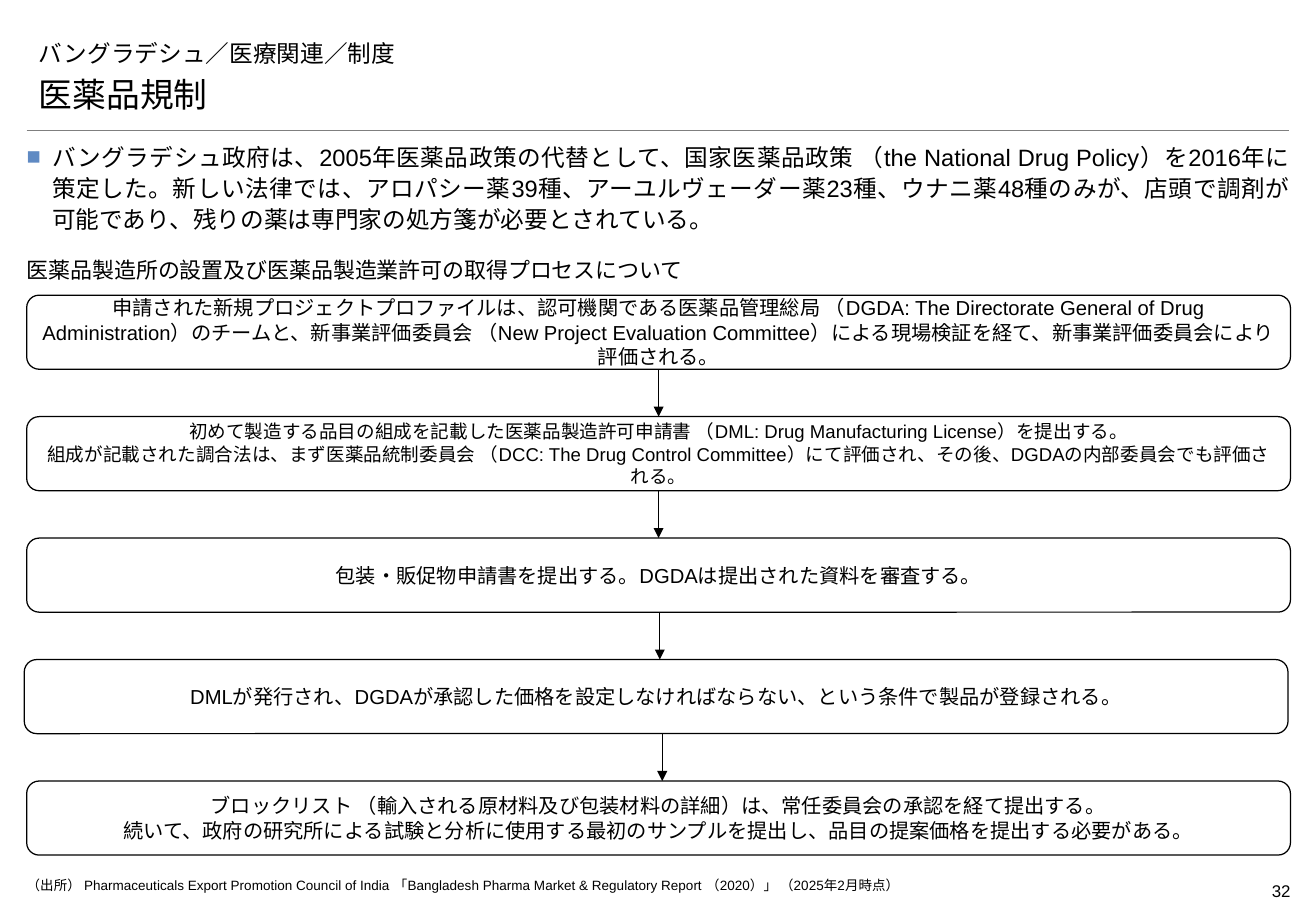
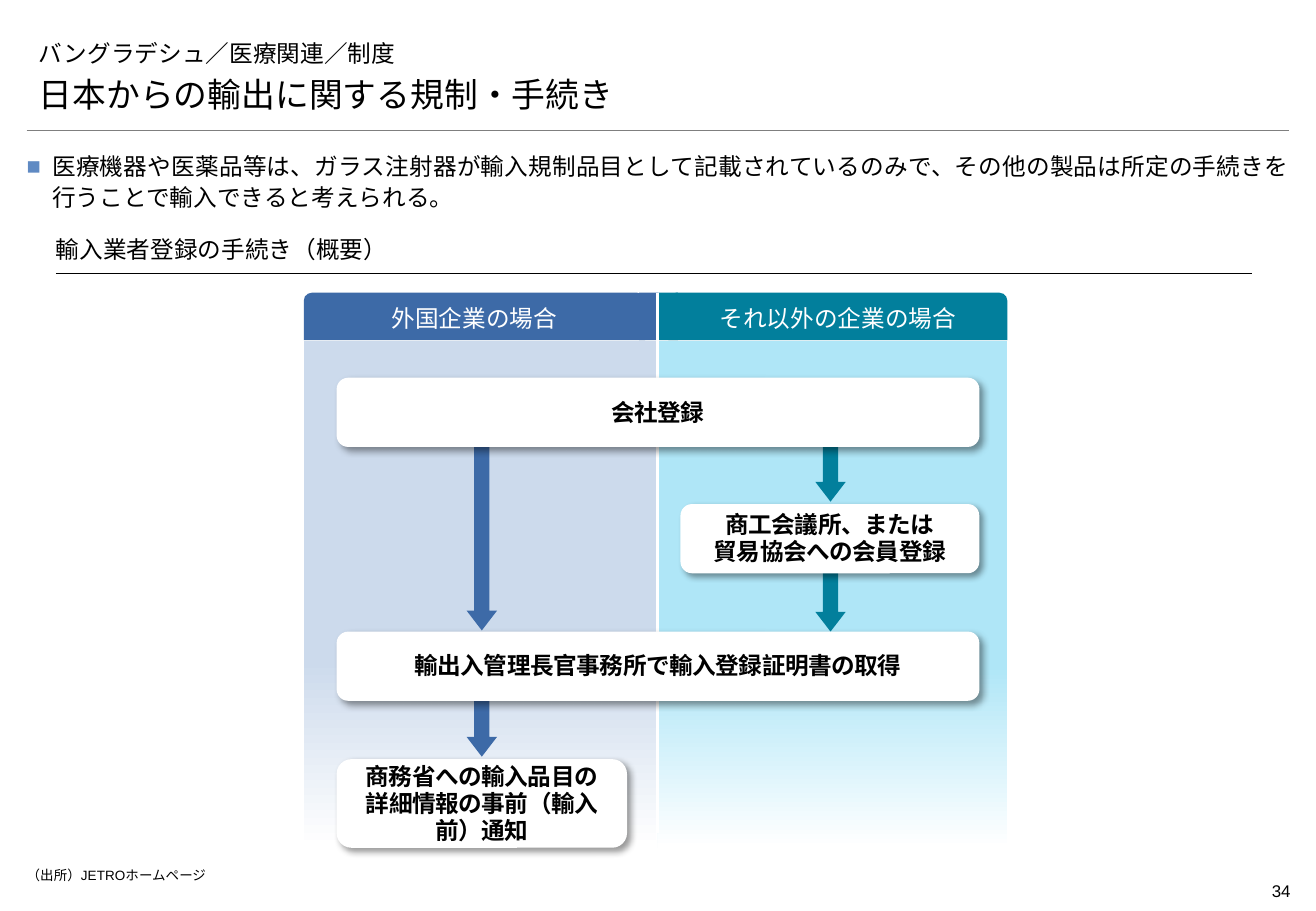
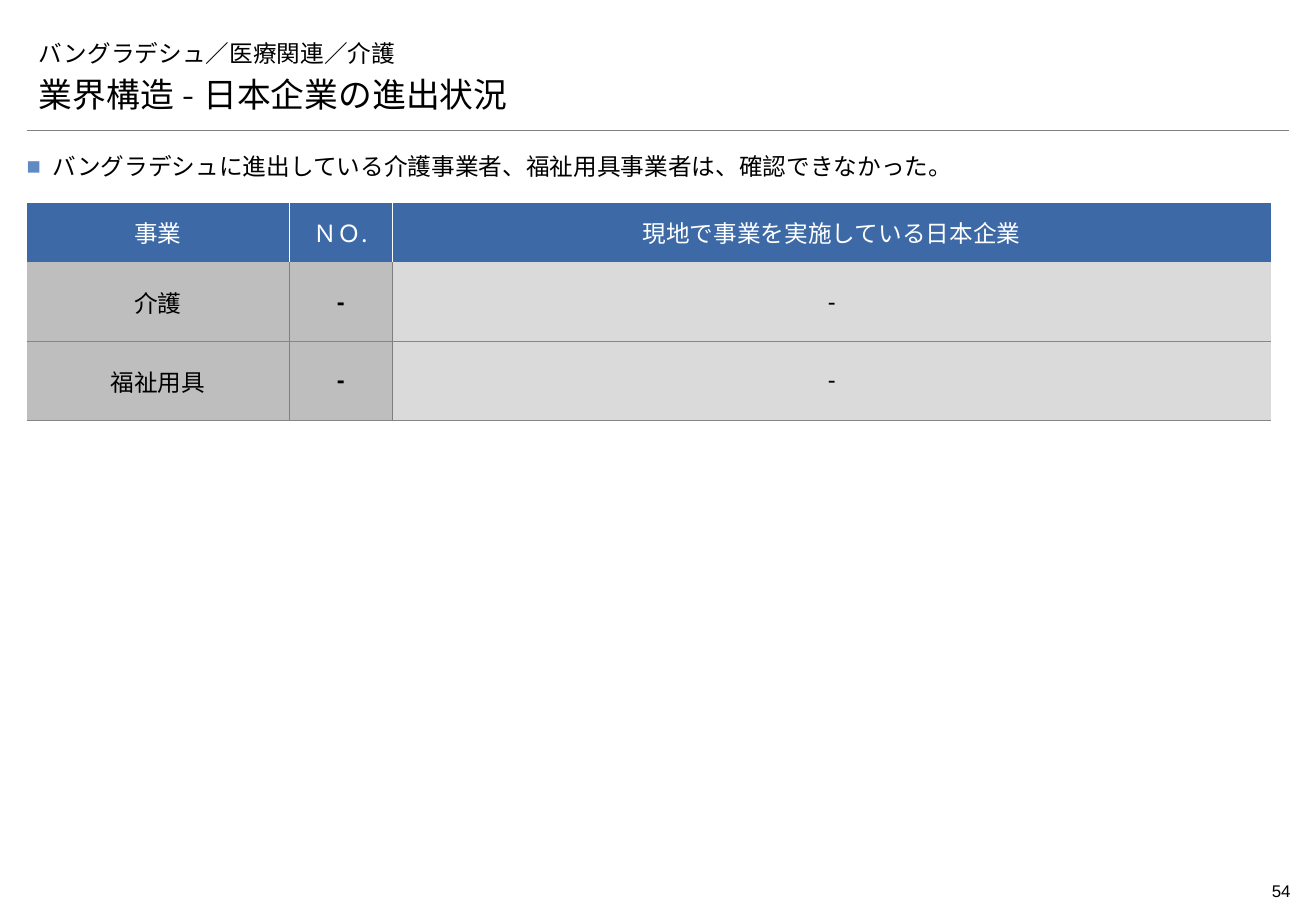
"""Build three slides on medical regulation and trade in Bangladesh."""
from copy import deepcopy
from dataclasses import dataclass
from typing import Any

from lxml import etree
from pptx import Presentation
from pptx.dml.color import RGBColor
from pptx.enum import shapes, text
from pptx.oxml import ns
from pptx.util import Inches, Pt

BLACK = RGBColor(0x00, 0x00, 0x00)
WHITE = RGBColor(0xFF, 0xFF, 0xFF)
BLUE = RGBColor(0x3D, 0x6A, 0xA7)
TEAL = RGBColor(0x02, 0x7F, 0x9C)
PALE = RGBColor(0xCC, 0xDA, 0xEC)
AQUA = RGBColor(0xAF, 0xE6, 0xF7)
MARK = RGBColor(0x5F, 0x8A, 0xC3)
GRAY = RGBColor(0x7F, 0x7F, 0x7F)
RULE = RGBColor(0x86, 0x86, 0x86)
DARK = RGBColor(0xBE, 0xBE, 0xBE)
LIGHT = RGBColor(0xDA, 0xDA, 0xDA)

ARIAL, MONT, NOTO = "Arial", "Montserrat", "Noto Sans CJK JP"
KIND = shapes.MSO_SHAPE
ALIGN = text.PP_ALIGN
MID = text.MSO_ANCHOR.MIDDLE
LOW = text.MSO_ANCHOR.BOTTOM
PLAIN = "{2D5ABB26-0587-4C30-8999-92F81FD0307C}"
LEFT, WIDE = 0.22, 10.39

Fmt = dict[str, Any]


@dataclass(frozen=True)
class Box:
    """Place of a shape in inches."""
    x: float
    y: float
    w: float
    h: float

    def args(self) -> tuple:
        """Return the place as lengths."""
        return tuple(Inches(v) for v in (self.x, self.y, self.w, self.h))


@dataclass(frozen=True)
class Step:
    """Step of the licence process and the x of the arrow below it."""
    words: str
    size: int = 12
    x: float = LEFT
    tail: float = 0


@dataclass(frozen=True)
class Card:
    """White card of the import flow."""
    box: Box
    words: str


@dataclass(frozen=True)
class Lane:
    """Column of the import flow with its head, filler and arrows."""
    body: Box
    head: Box
    patch: Box
    name: str
    color: RGBColor
    tint: RGBColor
    stop: float
    down: tuple[Box, ...]


@dataclass(frozen=True)
class Look:
    """Look of one table column."""
    width: float
    fill: RGBColor
    font: str
    bold: bool
    pad: float


def apply(obj: Any, vals: Fmt) -> None:
    """Set each named attribute."""
    for key, val in vals.items():
        setattr(obj, key, val)


def pads(x: float = 0.1, top: float = 0.05, low: float = 0.05) -> Fmt:
    """Return frame margins."""
    return {"margin_left": Inches(x), "margin_right": Inches(x),
            "margin_top": Inches(top), "margin_bottom": Inches(low)}


def node(parent: Any, tag: str, **attrs: str) -> Any:
    """Append a drawing element."""
    return etree.SubElement(parent, ns.qn(tag), attrs)


def write(frame: Any, words: str, size: float, name: str = ARIAL,
          color: RGBColor = BLACK, bold: bool = False, para: Fmt | None = None,
          track: int = 0) -> Any:
    """Write one formatted paragraph and return it."""
    line = frame.paragraphs[0]
    line.text = words
    apply(line, {"alignment": ALIGN.LEFT, **(para or {})})
    for run in line.runs:
        apply(run.font, {"size": Pt(size), "name": name, "bold": bold})
        run.font.color.rgb = color
        props = run.font._element
        if track:
            props.set("spc", str(track))
        node(props, "a:ea", typeface=NOTO)
    for gap in line._p.findall(ns.qn("a:br")):
        gap.append(deepcopy(line.runs[0].font._element))
    return line


def frame(shape: Any, vals: Fmt) -> Any:
    """Format and return a text frame."""
    apply(shape.text_frame, {"word_wrap": True,
                             "auto_size": text.MSO_AUTO_SIZE.NONE, **vals})
    return shape.text_frame


def label(slide: Any, box: Box, words: str, size: float, vals: Fmt, **look: Any) -> Any:
    """Add a text box and return its paragraph."""
    shape = slide.shapes.add_textbox(*box.args())
    return write(frame(shape, vals), words, size, **look)


def block(slide: Any, kind: Any, box: Box, fill: RGBColor, edge: RGBColor | None = None) -> Any:
    """Add a flat preset shape."""
    shape = slide.shapes.add_shape(kind, *box.args())
    shape.shadow.inherit = False
    shape.fill.solid()
    shape.fill.fore_color.rgb = fill
    if edge is None:
        shape.line.fill.background()
    else:
        shape.line.color.rgb = edge
        shape.line.width = Pt(0.75)
    return shape


def rule(slide: Any, x: float, y: float, to: tuple[float, float],
         color: RGBColor = BLACK, width: float = 0.75, arrow: bool = False) -> None:
    """Add a straight line."""
    ends = [Inches(v) for v in (x, y, *to)]
    line = slide.shapes.add_connector(shapes.MSO_CONNECTOR.STRAIGHT, *ends)
    line.line.color.rgb = color
    line.line.width = Pt(width)
    props = line._element.spPr
    if arrow:
        node(props.find(ns.qn("a:ln")), "a:tailEnd", type="triangle")
    node(props, "a:effectLst")


def base(deck: Any, trail: str, head: str, page: int) -> Any:
    """Add a slide with title, heading, rule and page number."""
    slide = deck.slides.add_slide(deck.slide_layouts[5])
    title = slide.shapes.title
    place = Box(LEFT, 0.21, WIDE, 0.39).args()
    apply(title, dict(zip(("left", "top", "width", "height"), place)))
    low = {"vertical_anchor": LOW, **pads()}
    write(frame(title, low), trail, 14, MONT)
    label(slide, Box(LEFT, 0.6, 10.4, 0.39), head, 20, low, name=MONT)
    rule(slide, LEFT, 1.07, (LEFT + WIDE, 1.07), GRAY, 0.25)
    label(slide, Box(9.83, 7.2, 0.79, 0.27), str(page), 10, pads(0),
          para={"alignment": ALIGN.RIGHT})
    return slide


def point(slide: Any, y: float, h: float, words: str) -> None:
    """Add the bulleted lead text."""
    line = label(slide, Box(LEFT, y, WIDE, h), words, 14, pads(0, 0, 0),
                 para={"alignment": ALIGN.JUSTIFY, "line_spacing": 1.1,
                       "space_after": Pt(2)})
    props = line._p.get_or_add_pPr()
    props.set("marL", str(Inches(0.21)))
    props.set("indent", str(-Inches(0.21)))
    node(node(props, "a:buClr"), "a:srgbClr", val=str(MARK))
    node(props, "a:buFont", typeface=ARIAL)
    node(props, "a:buChar", char="■")


def cite(slide: Any, y: float, words: str) -> None:
    """Add the source line."""
    label(slide, Box(LEFT, y, 10, 0.16), words, 8, pads(0, 0, 0))


STEPS = (
    Step("申請された新規プロジェクトプロファイルは、認可機関である医薬品管理総局 "
         "（DGDA: The Directorate General of Drug Administration）のチームと、"
         "新事業評価委員会 （New Project Evaluation Committee）による現場検証を経て、"
         "新事業評価委員会により評価される。", tail=5.42),
    Step("初めて製造する品目の組成を記載した医薬品製造許可申請書 "
         "（DML: Drug Manufacturing License）を提出する。\n"
         "組成が記載された調合法は、まず医薬品統制委員会 "
         "（DCC: The Drug Control Committee）にて評価され、その後、"
         "DGDAの内部委員会でも評価される。", size=11, tail=5.42),
    Step("包装・販促物申請書を提出する。DGDAは提出された資料を審査する。", tail=5.43),
    Step("DMLが発行され、DGDAが承認した価格を設定しなければならない、"
         "という条件で製品が登録される。", x=0.2, tail=5.45),
    Step("ブロックリスト （輸入される原材料及び包装材料の詳細）は、"
         "常任委員会の承認を経て提出する。\n"
         "続いて、政府の研究所による試験と分析に使用する最初のサンプルを提出し、"
         "品目の提案価格を提出する必要がある。"),
)


def drugs(deck: Any) -> None:
    """Build the drug regulation slide."""
    slide = base(deck, "バングラデシュ／医療関連／制度", "医薬品規制", 32)
    point(slide, 1.15, 1.01,
          "バングラデシュ政府は、2005年医薬品政策の代替として、国家医薬品政策 "
          "（the National Drug Policy）を2016年に策定した。新しい法律では、"
          "アロパシー薬39種、アーユルヴェーダー薬23種、ウナニ薬48種のみが、"
          "店頭で調剤が可能であり、残りの薬は専門家の処方箋が必要とされている。")
    label(slide, Box(LEFT, 2.1, 8.19, 0.31),
          "医薬品製造所の設置及び医薬品製造業許可の取得プロセスについて", 13,
          {"vertical_anchor": LOW, **pads(0, 0.05, 0.08)}, name=NOTO,
          para={"alignment": ALIGN.JUSTIFY, "line_spacing": 1.1, "space_after": Pt(2)})
    top, pitch, tall = 2.43, 1, 0.61
    for row, step in enumerate(STEPS):
        y = top + row * pitch
        shape = block(slide, KIND.ROUNDED_RECTANGLE, Box(step.x, y, 10.4, tall), WHITE, BLACK)
        write(frame(shape, {"vertical_anchor": MID, **pads()}), step.words, step.size,
              para={"alignment": ALIGN.CENTER})
        if step.tail:
            rule(slide, step.tail, y + tall, (step.tail, y + pitch), arrow=True)
    cite(slide, 7.22, "（出所） Pharmaceuticals Export Promotion Council of India "
         "「Bangladesh Pharma Market & Regulatory Report （2020）」 （2025年2月時点）")


LANES = (
    Lane(Box(5.41, 2.81, 2.88, 4.17), Box(5.5, 2.41, 2.79, 0.39),
         Box(5.42, 2.41, 0.16, 0.39), "それ以外の企業の場合", TEAL, AQUA, 0.64,
         (Box(6.71, 4.66, 0.25, 0.54), Box(6.71, 3.59, 0.25, 0.54))),
    Lane(Box(2.5, 2.81, 2.9, 4.17), Box(2.5, 2.41, 2.81, 0.39),
         Box(5.26, 2.41, 0.16, 0.39), "外国企業の場合", BLUE, PALE, 0.63,
         (Box(3.84, 5.73, 0.25, 0.5), Box(3.84, 3.67, 0.25, 1.52))),
)

CARDS = (
    Card(Box(5.6, 4.15, 2.46, 0.57), "商工会議所、または\n貿易協会への会員登録"),
    Card(Box(2.77, 5.2, 5.29, 0.57), "輸出入管理長官事務所で輸入登録証明書の取得"),
    Card(Box(2.77, 3.11, 5.29, 0.57), "会社登録"),
    Card(Box(2.77, 6.25, 2.39, 0.73), "商務省への輸入品目の\n詳細情報の事前（輸入前）通知"),
)


def shade(shape: Any) -> None:
    """Give a shape a soft shadow to the lower right."""
    cast = node(shape._element.spPr.find(ns.qn("a:effectLst")), "a:outerShdw",
                blurRad=str(Pt(4)), dist=str(Pt(3)), dir="2700000",
                algn="tl", rotWithShape="0")
    node(node(cast, "a:srgbClr", val=str(BLACK)), "a:alpha", val="40000")


def draw_lane(slide: Any, lane: Lane) -> None:
    """Draw a lane with its arrows and head."""
    body = block(slide, KIND.RECTANGLE, lane.body, lane.tint)
    body.fill.gradient()
    body.fill.gradient_angle = 270
    ends = ((lane.stop, lane.tint), (1, WHITE))
    for stop, (spot, color) in zip(body.fill.gradient_stops, ends):
        stop.position = spot
        stop.color.rgb = color
    for box in lane.down:
        arrow = block(slide, KIND.DOWN_ARROW, box, lane.color)
        arrow.adjustments[0] = 0.5
        arrow.adjustments[1] = 0.65
    head = block(slide, KIND.ROUND_2_SAME_RECTANGLE, lane.head, lane.color)
    vals = {"vertical_anchor": MID, **pads(0.1, 0, 0), "word_wrap": False}
    write(frame(head, vals), lane.name, 14, NOTO, WHITE,
          para={"alignment": ALIGN.CENTER})
    block(slide, KIND.RECTANGLE, lane.patch, lane.color)


def trade(deck: Any) -> None:
    """Build the import procedure slide."""
    slide = base(deck, "バングラデシュ／医療関連／制度", "日本からの輸出に関する規制・手続き", 34)
    point(slide, 1.23, 0.5,
          "医療機器や医薬品等は、ガラス注射器が輸入規制品目として記載されているのみで、"
          "その他の製品は所定の手続きを行うことで輸入できると考えられる。")
    rule(slide, 0.46, 2.25, (10.3, 2.25))
    label(slide, Box(0.46, 1.94, 9.84, 0.31), "輸入業者登録の手続き（概要）", 14,
          {"vertical_anchor": LOW, **pads(0, 0.05, 0.08)}, name=MONT)
    for lane in LANES:
        draw_lane(slide, lane)
    rule(slide, 5.41, 2.41, (5.41, 6.86), WHITE, 1.5)
    for card in CARDS:
        shape = block(slide, KIND.ROUNDED_RECTANGLE, card.box, WHITE)
        shade(shape)
        write(frame(shape, {"vertical_anchor": MID, **pads(0.04, 0, 0)}), card.words, 14,
              bold=True, track=-30,
              para={"alignment": ALIGN.CENTER, "line_spacing": Pt(16)})
    cite(slide, 7.14, "（出所）JETROホームページ")


LOOKS = (
    Look(2.16, DARK, NOTO, False, 0),
    Look(0.85, DARK, ARIAL, True, 0),
    Look(7.23, LIGHT, ARIAL, False, 0.08),
)
ROWS = (
    ("事業", "ＮＯ.", "現地で事業を実施している日本企業"),
    ("介護", "-", "‐"),
    ("福祉用具", "-", "‐"),
)
TALL = (0.49, 0.65, 0.65)


def edges(cell: Any, row: int, col: int) -> None:
    """Draw the borders of one cell in schema order."""
    sides: dict[str, RGBColor] = {}
    if row == 0:
        if col > 0:
            sides["a:lnL"] = WHITE
        sides["a:lnR"] = WHITE
    else:
        if col == 1:
            sides["a:lnL"] = GRAY
        if col != 1:
            sides["a:lnR"] = WHITE if col else GRAY
        if row > 1:
            sides["a:lnT"] = RULE
        sides["a:lnB"] = RULE
    props = cell._tc.get_or_add_tcPr()
    for tag, color in sides.items():
        line = node(props, tag, w=str(Pt(0.5)))
        node(node(line, "a:solidFill"), "a:srgbClr", val=str(color))


def firms(deck: Any) -> None:
    """Build the slide on Japanese firms in care."""
    slide = base(deck, "バングラデシュ／医療関連／介護", "業界構造 - 日本企業の進出状況", 54)
    point(slide, 1.23, 0.26,
          "バングラデシュに進出している介護事業者、福祉用具事業者は、確認できなかった。")
    box = Box(LEFT, 1.67, sum(look.width for look in LOOKS), sum(TALL))
    table = slide.shapes.add_table(len(ROWS), len(LOOKS), *box.args()).table
    table._tbl.tblPr.find(ns.qn("a:tableStyleId")).text = PLAIN
    for col, look in enumerate(LOOKS):
        table.columns[col].width = Inches(look.width)
    for row, words in enumerate(ROWS):
        table.rows[row].height = Inches(TALL[row])
        for col, look in enumerate(LOOKS):
            cell = table.cell(row, col)
            top = row == 0
            pad = look.pad if top else 0.08
            apply(cell, {"vertical_anchor": MID, **pads(pad, 0.04, 0.04)})
            edges(cell, row, col)
            cell.fill.solid()
            cell.fill.fore_color.rgb = BLUE if top else look.fill
            write(cell.text_frame, words[col], 14, NOTO if top else look.font,
                  WHITE if top else BLACK, look.bold and not top,
                  {"alignment": ALIGN.CENTER})


def main() -> None:
    """Build and save the deck."""
    deck = Presentation()
    apply(deck, {"slide_width": Inches(10.83), "slide_height": Inches(7.5)})
    for build in (drugs, trade, firms):
        build(deck)
    deck.save("out.pptx")


if __name__ == "__main__":
    main()
